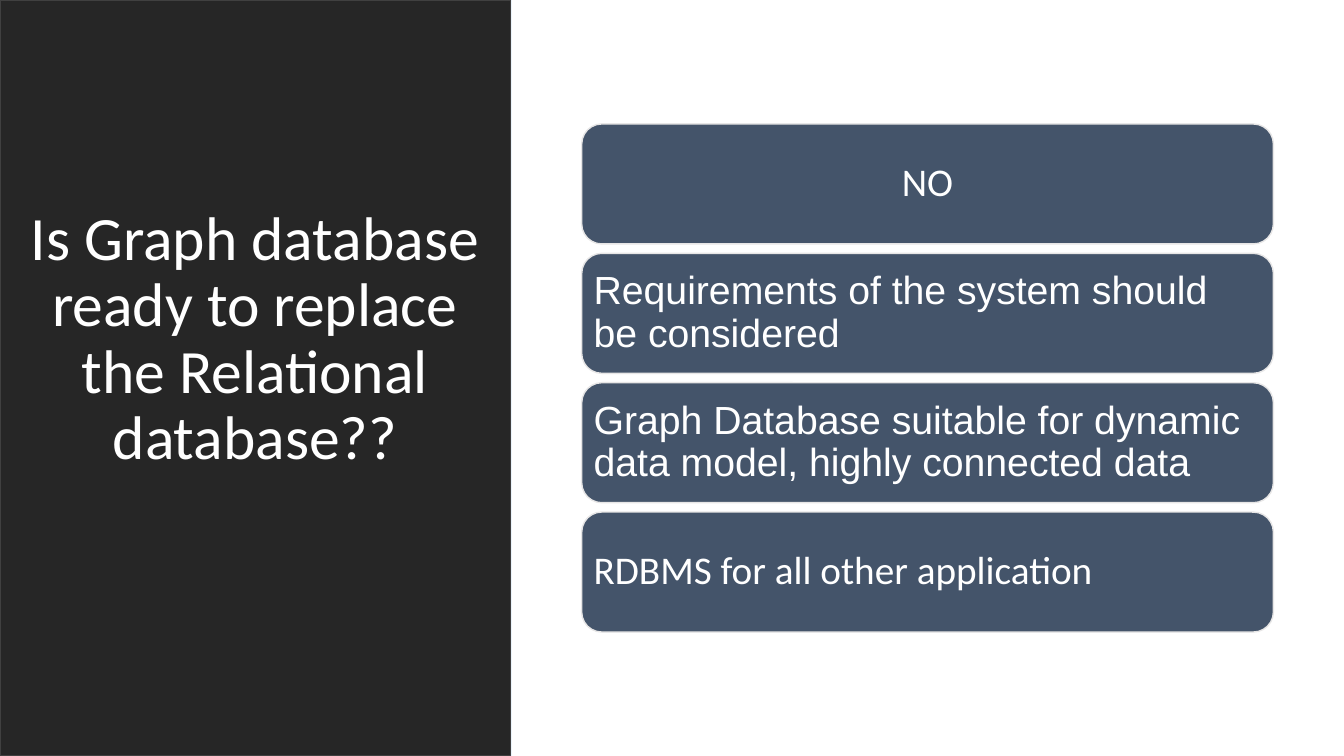
from pptx import Presentation
from pptx.dml.color import RGBColor
from pptx.enum.shapes import MSO_SHAPE
from pptx.enum.text import MSO_ANCHOR, MSO_AUTO_SIZE, PP_ALIGN
from pptx.util import Inches, Pt

# Content
TITLE = "Is Graph database ready to replace the Relational database??"
ANSWERS = [
    ("NO", "Calibri", PP_ALIGN.CENTER),
    ("Requirements of the system should be considered", "Arial", PP_ALIGN.LEFT),
    ("Graph Database suitable for dynamic data model, highly connected data",
     "Arial", PP_ALIGN.LEFT),
    ("RDBMS for all other application", "Calibri", PP_ALIGN.LEFT),
]

# Layout in inches
SLIDE_WIDTH, SLIDE_HEIGHT = 13.33, 7.5
PANEL_WIDTH, ACCENT_WIDTH = 5.06, 5.07
BOX_LEFT, BOX_WIDTH, BOX_HEIGHT = 5.77, 6.86, 1.19
FIRST_TOP, LAST_TOP = 1.23, 5.08


def color(value):
    return RGBColor.from_string(value)


def paint(shape, fill, line=None, width=1):
    shape.fill.solid()
    shape.fill.fore_color.rgb = color(fill)
    if line:
        shape.line.color.rgb = color(line)
        shape.line.width = Pt(width)
    else:
        shape.line.fill.background()


def add_box(page, kind, left, top, width, height):
    box = page.shapes.add_shape(
        kind, Inches(left), Inches(top), Inches(width), Inches(height))
    box.shadow.inherit = False
    return box


def write(shape, text, size, font="Calibri", align=PP_ALIGN.CENTER,
          insets=(0.1, 0.05, 0.1, 0.05)):
    frame = shape.text_frame
    frame.word_wrap = True
    frame.auto_size = MSO_AUTO_SIZE.NONE
    frame.vertical_anchor = MSO_ANCHOR.MIDDLE
    (frame.margin_left, frame.margin_top,
     frame.margin_right, frame.margin_bottom) = map(Inches, insets)
    para = frame.paragraphs[0]
    para.alignment = align
    para.line_spacing = 0.9
    span = para.add_run()
    span.text = text
    span.font.name = font
    span.font.size = Pt(size)
    span.font.color.rgb = color("FFFFFF")


def main():
    deck = Presentation()
    deck.slide_width, deck.slide_height = Inches(SLIDE_WIDTH), Inches(SLIDE_HEIGHT)
    page = deck.slides.add_slide(deck.slide_layouts[5])

    # Dark title panel, its text set a little above the middle
    title = page.shapes.title
    title.left, title.top = Inches(0), Inches(0)
    title.width, title.height = Inches(PANEL_WIDTH), Inches(SLIDE_HEIGHT)
    paint(title, "262626", line="404040", width=0.75)
    write(title, TITLE, 44, insets=(0.1, 0.05, 0.1, 0.8))

    # Blue accent behind the panel, showing as a thin edge
    accent = add_box(page, MSO_SHAPE.RECTANGLE, 0, 0, ACCENT_WIDTH, SLIDE_HEIGHT)
    paint(accent, "5B9BD5")
    title.element.addprevious(accent.element)

    # Evenly spaced answers
    pitch = (LAST_TOP - FIRST_TOP) / (len(ANSWERS) - 1)
    for index, (text, font, align) in enumerate(ANSWERS):
        box = add_box(page, MSO_SHAPE.ROUNDED_RECTANGLE, BOX_LEFT,
                      FIRST_TOP + index * pitch, BOX_WIDTH, BOX_HEIGHT)
        paint(box, "44546A", line="E7E6E6")
        write(box, text, 28, font=font, align=align, insets=(0.06,) * 4)

    deck.save("out.pptx")


if __name__ == "__main__":
    main()
